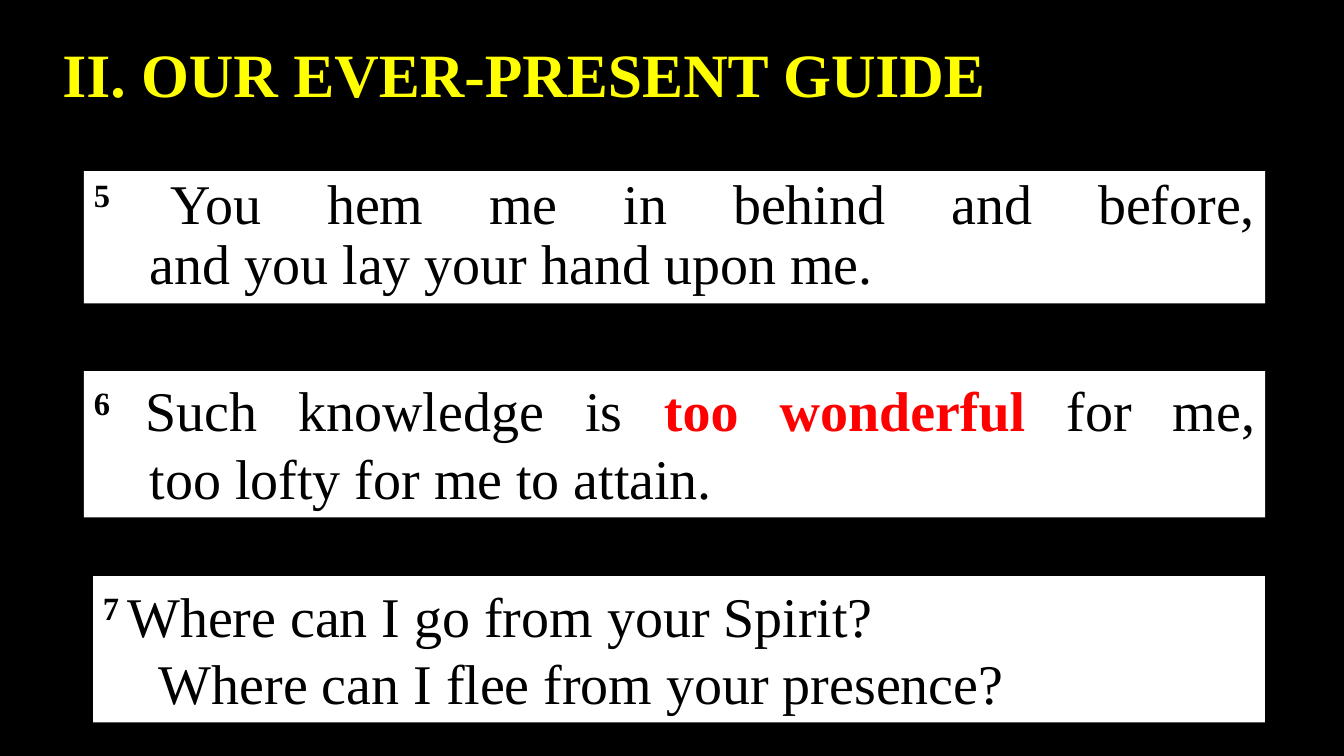
from pptx import Presentation
from pptx.dml.color import RGBColor
from pptx.enum.shapes import MSO_SHAPE as Shape
from pptx.enum.text import MSO_ANCHOR as Anchor, MSO_AUTO_SIZE as AutoSize, PP_ALIGN as Align
from pptx.util import Pt

BLACK = RGBColor(0x00, 0x00, 0x00)
WHITE = RGBColor(0xFF, 0xFF, 0xFF)
YELLOW = RGBColor(0xFF, 0xFF, 0x00)
RED = RGBColor(0xFF, 0x00, 0x00)
VERSE_INDENT = Pt(40)


def add_span(para, text, size=40, color=BLACK, bold=False, raised=False):
    span = para.add_run()
    span.text = text
    span.font.name = "Times New Roman"
    span.font.size = Pt(size)
    span.font.color.rgb = color
    span.font.bold = bold
    if raised:
        span._r.get_or_add_rPr().set("baseline", "30000")


deck = Presentation()
deck.slide_width, deck.slide_height = Pt(960), Pt(540)
page = deck.slides.add_slide(deck.slide_layouts[6])
page.background.fill.solid()
page.background.fill.fore_color.rgb = BLACK

title = page.shapes.add_textbox(Pt(37.5), Pt(28), Pt(680.5), Pt(55.5))
title.text_frame.word_wrap = False
title.text_frame.auto_size = AutoSize.SHAPE_TO_FIT_TEXT
para = title.text_frame.paragraphs[0]
para.line_spacing = 0.9
para.space_before = Pt(10)
add_span(para, "II. OUR EVER-PRESENT GUIDE", size=44, color=YELLOW, bold=True)

emphasis = {"color": RED, "bold": True}
verses = [
    ("5", (60, 122.25, 843.75, 94.5), Align.JUSTIFY, 0.9, 10,
     [("You hem me in behind and before,", {})],
     "and you lay your hand upon me."),
    ("6", (60, 265, 843.75, 104.5), Align.JUSTIFY, 1.0, 0,
     [("Such knowledge is ", {}), ("too wonderful ", emphasis), ("for me,", {})],
     "too lofty for me to attain."),
    ("7", (66.5, 411.5, 837, 104.5), Align.LEFT, 1.0, 0,
     [("Where can I go from your Spirit?", {})],
     "Where can I flee from your presence?"),
]

for number, place, align, line_spacing, space_before, first_line, second_line in verses:
    box = page.shapes.add_shape(Shape.RECTANGLE, *map(Pt, place))
    box.shadow.inherit = False
    box.fill.solid()
    box.fill.fore_color.rgb = WHITE
    box.line.fill.background()
    frame = box.text_frame
    frame.word_wrap = True
    frame.auto_size = AutoSize.SHAPE_TO_FIT_TEXT
    frame.vertical_anchor = Anchor.TOP
    para = frame.paragraphs[0]
    para.alignment = align
    para.line_spacing = line_spacing
    para.space_before = Pt(space_before)
    properties = para._p.get_or_add_pPr()
    properties.set("marL", str(VERSE_INDENT))
    properties.set("indent", str(-VERSE_INDENT))
    add_span(para, number + " ", bold=True, raised=True)
    for text, style in first_line:
        add_span(para, text, **style)
    para.add_line_break()
    add_span(para, second_line)

deck.save("out.pptx")
